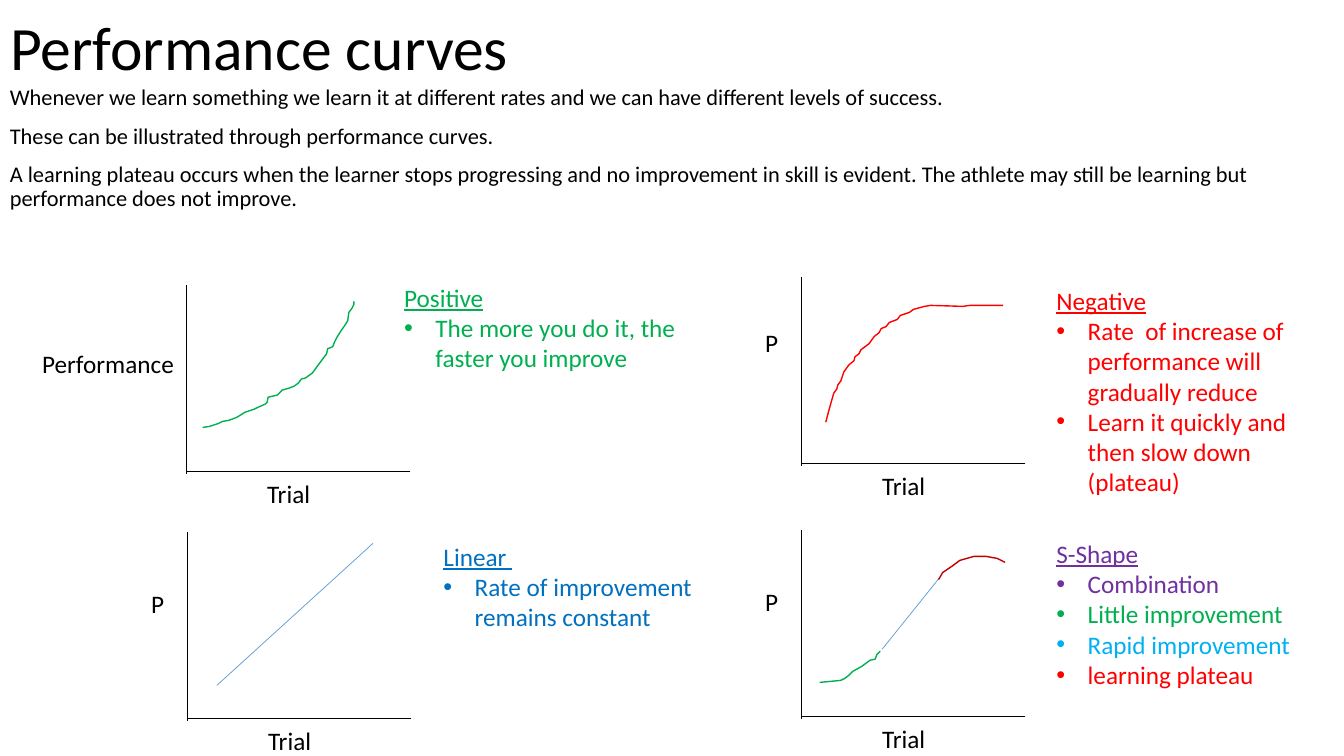
import pptx
import pptx.dml.color
import pptx.enum.shapes
import pptx.enum.text
import pptx.oxml.ns
import pptx.util
from lxml import etree
from pptx.util import Inches

BLACK, GREEN, RED, DARK_RED = "000000", "00B050", "FF0000", "C00000"
BLUE, LIGHT_BLUE, SKY_BLUE, PURPLE = "0070C0", "5B9BD5", "00B0F0", "7030A0"

INTRO = [
    "Whenever we learn something we learn it at different rates and we can have "
    "different levels of success.",
    "These can be illustrated through performance curves.",
    "A learning plateau occurs when the learner stops progressing and no improvement "
    "in skill is evident. The athlete may still be learning but performance does not improve.",
]

GRAPHS = [
    ((1.85, 2.83), "Performance", (0.32, 3.41)),
    ((7.95, 2.75), "P", (7.49, 3.2)),
    ((1.86, 5.28), "P", (1.4, 5.79)),
    ((7.95, 5.26), "P", (7.49, 5.77)),
]

NOTES = [
    ((3.91, 2.75), 1.01, "Positive", GREEN,
     [("The more you do it, the faster you improve", GREEN)]),
    ((10.38, 2.78), 2.22, "Negative", RED,
     [("Rate  of increase of performance will gradually reduce", RED),
      ("Learn it quickly and then slow down (plateau)", RED)]),
    ((4.3, 5.32), 1.01, "Linear ", BLUE,
     [("Rate of improvement remains constant", BLUE)]),
    ((10.38, 5.29), 1.62, "S-Shape", PURPLE,
     [("Combination", PURPLE), ("Little improvement", GREEN),
      ("Rapid improvement", SKY_BLUE), ("learning plateau", RED)]),
]

POSITIVE_CURVE = [
    (2.01, 4.24), (2.08, 4.23), (2.17, 4.2), (2.21, 4.18), (2.27, 4.17), (2.35, 4.14),
    (2.43, 4.09), (2.52, 4.06), (2.56, 4.04), (2.63, 4.01), (2.65, 3.99), (2.66, 3.94),
    (2.75, 3.92), (2.8, 3.87), (2.87, 3.85), (2.92, 3.83), (2.96, 3.8), (2.99, 3.76),
    (3.03, 3.75), (3.1, 3.7), (3.15, 3.63), (3.21, 3.55), (3.24, 3.51), (3.25, 3.46),
    (3.3, 3.44), (3.32, 3.39), (3.34, 3.35), (3.39, 3.27), (3.42, 3.23), (3.45, 3.18),
    (3.46, 3.1), (3.49, 3.06), (3.51, 3.02), (3.51, 2.99),
]
NEGATIVE_CURVE = [
    (8.19, 4.19), (8.23, 4.04), (8.27, 3.9), (8.3, 3.86), (8.31, 3.82), (8.34, 3.78),
    (8.37, 3.69), (8.42, 3.62), (8.47, 3.58), (8.48, 3.54), (8.52, 3.51), (8.54, 3.47),
    (8.62, 3.41), (8.67, 3.34), (8.72, 3.3), (8.74, 3.26), (8.79, 3.24), (8.82, 3.2),
    (8.9, 3.17), (8.93, 3.13), (9.02, 3.1), (9.06, 3.07), (9.17, 3.04), (9.23, 3.03),
    (9.55, 3.04), (9.62, 3.03), (9.95, 3.03),
]
SLOW_START = [
    (8.13, 6.77), (8.24, 6.76), (8.34, 6.75), (8.38, 6.73), (8.42, 6.7), (8.46, 6.66),
    (8.55, 6.61), (8.59, 6.58), (8.63, 6.55), (8.68, 6.54), (8.7, 6.49), (8.73, 6.46),
]
PLATEAU = [
    (9.31, 5.75), (9.35, 5.68), (9.44, 5.62), (9.48, 5.59), (9.52, 5.56), (9.59, 5.54),
    (9.66, 5.52), (9.78, 5.52), (9.89, 5.54), (9.93, 5.56), (9.97, 5.58),
]


def rgb(value):
    """Turn a hex string into a colour."""
    return pptx.dml.color.RGBColor.from_string(value)


def style_paragraph(para, size, color, underline=None):
    """Set the font of a whole paragraph."""
    para.font.name = "Calibri"
    para.font.size = pptx.util.Pt(size)
    para.font.color.rgb = rgb(color)
    para.font.underline = underline


def add_bullet(para):
    """Give a paragraph a round bullet with a hanging indent."""
    properties = para._p.get_or_add_pPr()
    properties.set("marL", str(Inches(0.31)))
    properties.set("indent", str(Inches(-0.31)))
    font = etree.SubElement(properties, pptx.oxml.ns.qn("a:buFont"))
    font.set("typeface", "Arial")
    bullet = etree.SubElement(properties, pptx.oxml.ns.qn("a:buChar"))
    bullet.set("char", "•")


def add_box(slide, left, top, width, height):
    """Add a wrapping text box and return its text frame."""
    box = slide.shapes.add_textbox(Inches(left), Inches(top), Inches(width), Inches(height))
    box.text_frame.word_wrap = True
    return box.text_frame


def add_title(slide, text):
    """Place and format the slide title."""
    title = slide.shapes.title
    title.left, title.top = Inches(0), Inches(-0.22)
    title.width, title.height = Inches(11.5), Inches(1.45)
    frame = title.text_frame
    frame.text = text
    frame.auto_size = pptx.enum.text.MSO_AUTO_SIZE.NONE
    frame.vertical_anchor = pptx.enum.text.MSO_ANCHOR.MIDDLE
    para = frame.paragraphs[0]
    para.alignment = pptx.enum.text.PP_ALIGN.LEFT
    para.line_spacing = 0.9
    style_paragraph(para, 44, BLACK)


def add_intro(slide, texts):
    """Add the introductory paragraphs."""
    frame = add_box(slide, 0, 0.81, 12.97, 4.76)
    frame.text = "\n".join(texts)
    for para in frame.paragraphs:
        para.line_spacing = 0.9
        para.space_before = pptx.util.Pt(10)
        style_paragraph(para, 16, BLACK)


def add_label(slide, text, left, top):
    """Add an axis label."""
    frame = add_box(slide, left, top, 1.52, 0.4)
    frame.text = text
    style_paragraph(frame.paragraphs[0], 18, BLACK)


def add_line(slide, start, end, color):
    """Add a thin straight line."""
    points = [Inches(value) for value in (*start, *end)]
    line = slide.shapes.add_connector(pptx.enum.shapes.MSO_CONNECTOR.STRAIGHT, *points)
    line.line.color.rgb = rgb(color)
    line.line.width = pptx.util.Pt(0.5)
    etree.SubElement(line._element.spPr, pptx.oxml.ns.qn("a:effectLst"))


def add_graph(slide, corner, label, label_place):
    """Add a pair of axes with their labels."""
    left, top = corner
    add_line(slide, corner, (left, top + 1.87), BLACK)
    add_line(slide, (left + 2.22, top + 1.85), (left, top + 1.85), BLACK)
    add_label(slide, label, *label_place)
    add_label(slide, "Trial", left + 0.7, top + 1.87)


def add_note(slide, place, height, heading, color, bullets):
    """Add an underlined heading followed by bullets."""
    frame = add_box(slide, *place, 2.99, height)
    frame.text = heading
    style_paragraph(frame.paragraphs[0], 18, color, True)
    for text, bullet_color in bullets:
        para = frame.add_paragraph()
        para.text = text
        add_bullet(para)
        style_paragraph(para, 18, bullet_color)


def add_curve(slide, points, color):
    """Add an open curve through points."""
    start, *rest = [(Inches(x), Inches(y)) for x, y in points]
    builder = slide.shapes.build_freeform(*start)
    builder.add_line_segments(rest, close=False)
    curve = builder.convert_to_shape()
    curve.shadow.inherit = False
    curve.fill.background()
    curve.line.color.rgb = rgb(color)
    curve.line.width = pptx.util.Pt(1)


def main():
    """Build the slide and save the deck."""
    deck = pptx.Presentation()
    deck.slide_width, deck.slide_height = Inches(13.33), Inches(7.5)
    slide = deck.slides.add_slide(deck.slide_layouts.get_by_name("Title Only"))
    add_title(slide, "Performance curves")
    add_intro(slide, INTRO)
    for graph in GRAPHS:
        add_graph(slide, *graph)
    for note in NOTES:
        add_note(slide, *note)
    add_line(slide, (2.15, 6.8), (3.7, 5.39), LIGHT_BLUE)
    add_line(slide, (8.75, 6.44), (9.32, 5.73), LIGHT_BLUE)
    add_curve(slide, POSITIVE_CURVE, GREEN)
    add_curve(slide, NEGATIVE_CURVE, RED)
    add_curve(slide, SLOW_START, GREEN)
    add_curve(slide, PLATEAU, DARK_RED)
    deck.save("out.pptx")


if __name__ == "__main__":
    main()
